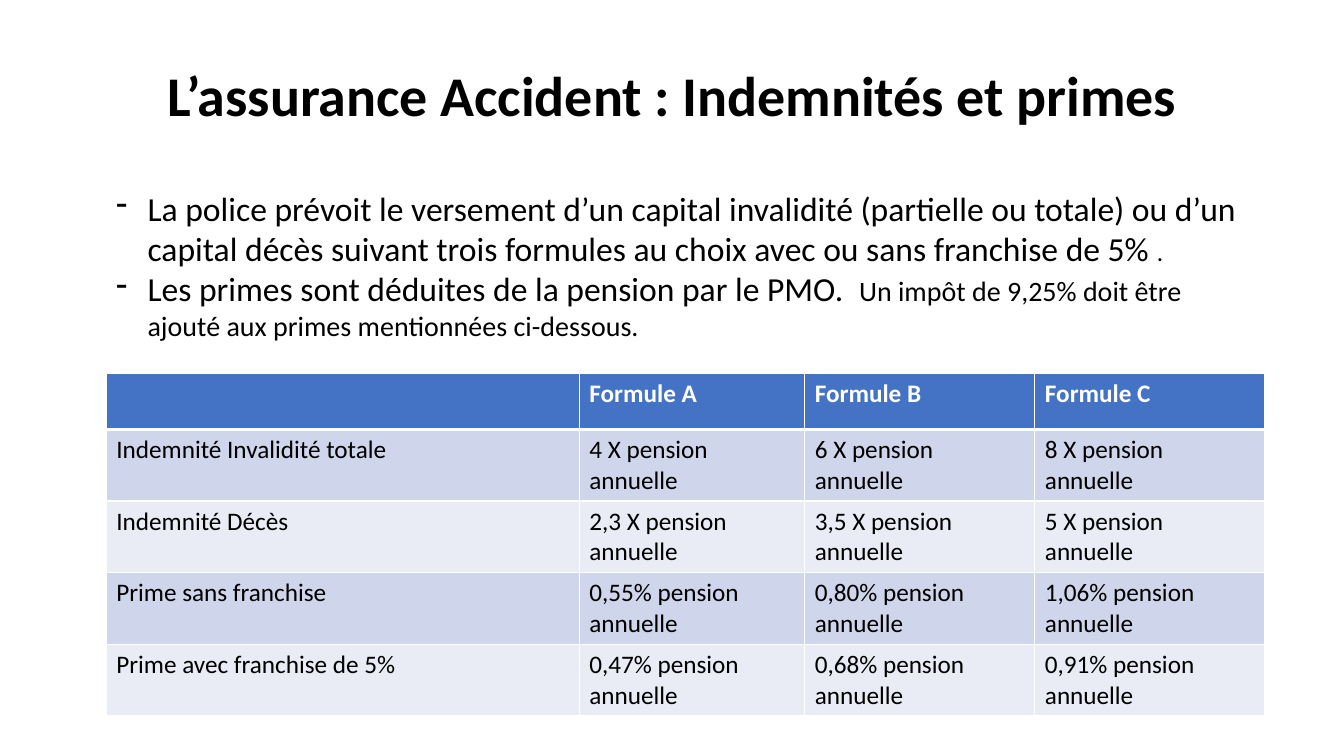
import dataclasses

import pptx
import pptx.dml.color
import pptx.enum.text
import pptx.oxml
import pptx.oxml.ns
import pptx.util
from pptx.util import Cm, Pt


@dataclasses.dataclass(frozen=True)
class Theme:
    font: str = "Calibri"
    text: str = "000000"
    white: str = "FFFFFF"
    header: str = "4472C4"
    bands: tuple = ("CFD5EA", "E9EBF5")
    title_size: int = 40
    lead_size: int = 24
    detail_size: int = 20
    table_size: int = 18
    rule: int = 1
    header_rule: int = 3


FORMULAS = [
    ["", "Formule A", "Formule B", "Formule C"],
    ["Indemnité Invalidité totale", "4 X pension annuelle",
     "6 X pension annuelle", "8 X pension annuelle"],
    ["Indemnité Décès", "2,3 X pension annuelle",
     "3,5 X pension annuelle", "5 X pension annuelle"],
    ["Prime sans franchise", "0,55% pension annuelle",
     "0,80% pension annuelle", "1,06% pension annuelle"],
    ["Prime avec franchise de 5%", "0,47% pension annuelle",
     "0,68% pension annuelle", "0,91% pension annuelle"],
]


class SlideBuilder:
    def __init__(self, page, theme):
        self.page = page
        self.theme = theme

    def add_span(self, para, text, size, color=None, bold=False):
        span = para.add_run()
        span.text = text
        span.font.name = self.theme.font
        span.font.size = Pt(size)
        span.font.bold = bold
        span.font.color.rgb = pptx.dml.color.RGBColor.from_string(color or self.theme.text)

    def title(self, text, left, top, width, height):
        box = self.page.shapes.title
        box.left, box.top, box.width, box.height = left, top, width, height
        frame = box.text_frame
        frame.auto_size = pptx.enum.text.MSO_AUTO_SIZE.NONE
        frame.vertical_anchor = pptx.enum.text.MSO_ANCHOR.MIDDLE
        para = frame.paragraphs[0]
        para.alignment = pptx.enum.text.PP_ALIGN.CENTER
        para.line_spacing = 0.9
        self.add_span(para, text, self.theme.title_size, bold=True)

    def dash_list(self, items, left, top, width, height):
        """Each item is a list of (text, size) pairs."""
        frame = self.page.shapes.add_textbox(left, top, width, height).text_frame
        frame.word_wrap = True
        frame.auto_size = pptx.enum.text.MSO_AUTO_SIZE.SHAPE_TO_FIT_TEXT
        for index, spans in enumerate(items):
            para = frame.add_paragraph() if index else frame.paragraphs[0]
            indent = Cm(0.79)
            properties = para._p.get_or_add_pPr()
            properties.set("marL", str(indent))
            properties.set("indent", str(-indent))
            namespace = pptx.oxml.ns.nsdecls("a")
            properties.append(pptx.oxml.parse_xml(f'<a:buFontTx {namespace}/>'))
            properties.append(pptx.oxml.parse_xml(f'<a:buChar {namespace} char="-"/>'))
            for text, size in spans:
                self.add_span(para, text, size)

    def cell_borders(self, cell, bottom, top):
        properties = cell._tc.get_or_add_tcPr()
        rule = self.theme.rule
        sides = [("L", rule), ("R", rule), ("T", top), ("B", bottom)]
        for place, (side, weight) in enumerate(sides):
            properties.insert(place, pptx.oxml.parse_xml(
                f'<a:ln{side} {pptx.oxml.ns.nsdecls("a")} w="{Pt(weight)}">'
                f'<a:solidFill><a:srgbClr val="{self.theme.white}"/></a:solidFill>'
                f'</a:ln{side}>'))

    def table(self, rows, left, top, column_widths, row_heights):
        theme = self.theme
        grid = self.page.shapes.add_table(
            len(rows), len(column_widths), left, top,
            sum(column_widths), sum(row_heights)).table
        for column, width in zip(grid.columns, column_widths):
            column.width = width
        for row, height in zip(grid.rows, row_heights):
            row.height = height
        for line, texts in enumerate(rows):
            is_header = line == 0
            fill = theme.header if is_header else theme.bands[(line - 1) % 2]
            for position, text in enumerate(texts):
                cell = grid.cell(line, position)
                cell.fill.solid()
                cell.fill.fore_color.rgb = pptx.dml.color.RGBColor.from_string(fill)
                self.cell_borders(
                    cell,
                    bottom=theme.header_rule if is_header else theme.rule,
                    top=theme.header_rule if line == 1 else theme.rule)
                if text:
                    self.add_span(cell.text_frame.paragraphs[0], text, theme.table_size,
                                  theme.white if is_header else theme.text, is_header)


def main():
    deck = pptx.Presentation()
    deck.slide_width, deck.slide_height = Cm(33.87), Cm(19.05)
    theme = Theme()
    builder = SlideBuilder(deck.slides.add_slide(deck.slide_layouts[5]), theme)

    builder.title("L’assurance Accident : Indemnités et primes",
                  Cm(2.33), Cm(1), Cm(29.21), Cm(2.97))
    builder.table(FORMULAS, Cm(2.68), Cm(9.4),
                  [Cm(11.92), Cm(5.68), Cm(5.8), Cm(5.8)],
                  [Cm(1.42)] + [Cm(1.45)] * 4)
    builder.dash_list([
        [("La police prévoit le versement d’un capital invalidité (partielle ou totale) "
          "ou d’un capital décès suivant trois formules au choix avec ou sans "
          "franchise de 5% ", theme.lead_size),
         (".", theme.table_size)],
        [("Les primes sont déduites de la pension par le PMO.  ", theme.lead_size),
         ("Un impôt de 9,25% doit être ajouté aux primes mentionnées ci-dessous.",
          theme.detail_size)],
    ], Cm(2.68), Cm(4.6), Cm(28.88), Cm(5.13))
    deck.save("out.pptx")


if __name__ == "__main__":
    main()
